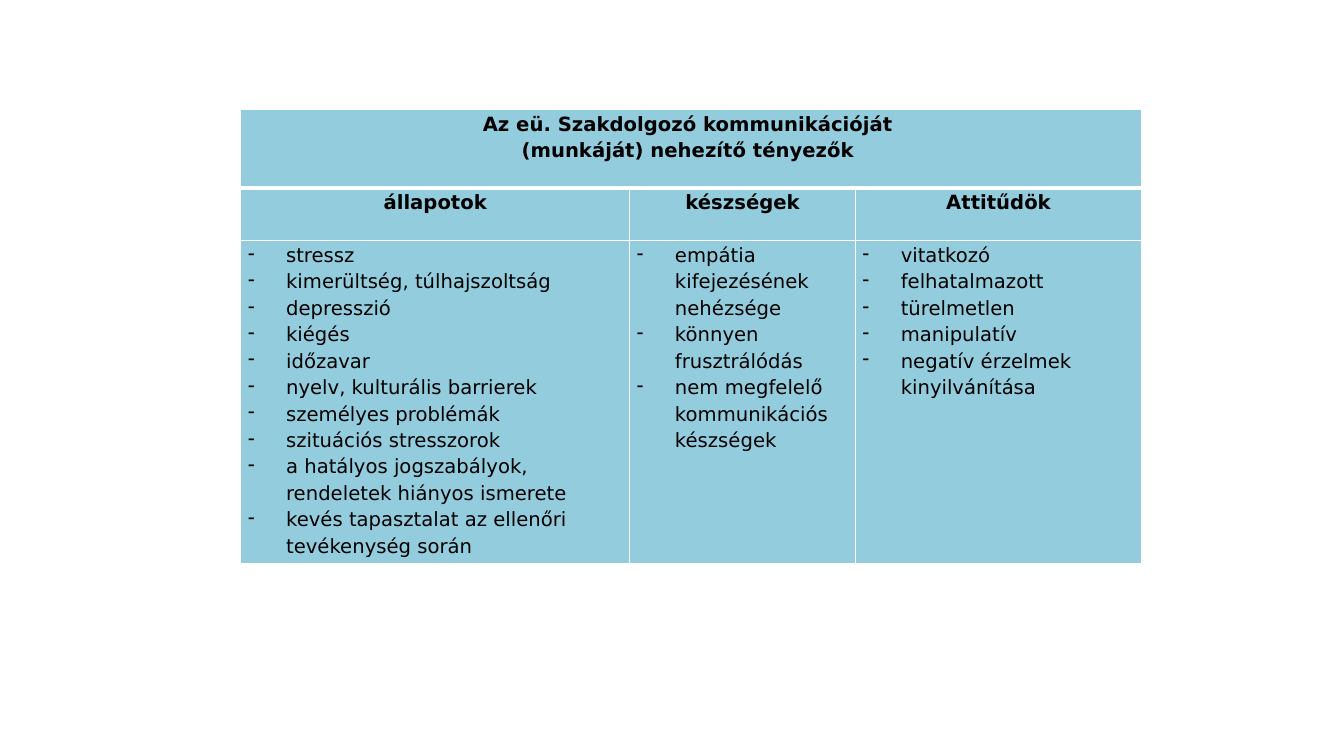
from dataclasses import dataclass

from pptx import Presentation
from pptx.dml.color import RGBColor
from pptx.enum.text import PP_ALIGN
from pptx.oxml import parse_xml
from pptx.oxml.ns import nsdecls
from pptx.util import Cm, Pt


@dataclass(frozen=True)
class Theme:
    fill: str = "93CDDD"
    line: str = "FFFFFF"
    ink: str = "000000"
    font: str = "DejaVu Sans"
    size: int = 14
    thin: int = 1
    thick: int = 3


THEME = Theme()

TITLE = ["Az eü. Szakdolgozó kommunikációját ", "(munkáját) nehezítő tényezők "]
HEADS = ["állapotok", "készségek", "Attitűdök"]
LISTS = [
    [
        "stressz",
        "kimerültség, túlhajszoltság",
        "depresszió",
        "kiégés",
        "időzavar",
        "nyelv, kulturális barrierek",
        "személyes problémák",
        "szituációs stresszorok",
        "a hatályos jogszabályok, rendeletek hiányos ismerete",
        "kevés tapasztalat az ellenőri tevékenység során",
    ],
    [
        "empátia kifejezésének nehézsége",
        "könnyen frusztrálódás",
        "nem megfelelő kommunikációs készségek",
    ],
    [
        "vitatkozó",
        "felhatalmazott",
        "türelmetlen",
        "manipulatív",
        "negatív érzelmek kinyilvánítása",
    ],
]

# Table layout in centimetres
LEFT, TOP = 6.07, 2.76
COLS = [9.8, 5.69, 7.21]
ROWS = [1.98, 1.32, 8.15]
PAD = 0.18
INDENT = 0.96


def add_dash(para):
    """Give a paragraph a hanging dash bullet."""
    props = para._p.get_or_add_pPr()
    props.set("marL", str(Cm(INDENT)))
    props.set("indent", str(-Cm(INDENT)))
    props.append(parse_xml(f'<a:buChar {nsdecls("a")} char="-"/>'))


def add_edges(cell, top, bottom):
    """Draw the four cell borders, which come before the fill."""
    props = cell._tc.get_or_add_tcPr()
    widths = {"L": THEME.thin, "R": THEME.thin, "T": top, "B": bottom}
    for spot, (side, width) in enumerate(widths.items()):
        props.insert(spot, parse_xml(
            f'<a:ln{side} {nsdecls("a")} w="{Pt(width)}"><a:solidFill>'
            f'<a:srgbClr val="{THEME.line}"/></a:solidFill></a:ln{side}>'))


def style_cell(cell, row):
    """Set the padding, fill and borders of a cell."""
    cell.margin_left = cell.margin_right = Cm(PAD)
    cell.margin_top = cell.margin_bottom = 0
    cell.fill.solid()
    cell.fill.fore_color.rgb = RGBColor.from_string(THEME.fill)
    add_edges(cell,
              THEME.thick if row == 1 else THEME.thin,
              THEME.thick if row == 0 else THEME.thin)


def write_cell(cell, lines, head):
    """Fill a cell with centred headings or a dashed list."""
    frame = cell.text_frame
    frame.text = "\n".join(lines)
    for para in frame.paragraphs:
        para.line_spacing = 1.15
        para.alignment = PP_ALIGN.CENTER if head else PP_ALIGN.LEFT
        if not head:
            add_dash(para)
        for run in para.runs:
            font = run.font
            font.name = THEME.font
            font.size = Pt(THEME.size)
            font.bold = head
            font.color.rgb = RGBColor.from_string(THEME.ink)


def add_grid(slide):
    """Build the empty table with its merged title row."""
    frame = slide.shapes.add_table(len(ROWS), len(COLS), Cm(LEFT), Cm(TOP),
                                   Cm(sum(COLS)), Cm(sum(ROWS)))
    table = frame.table
    table.first_row = table.horz_banding = False
    for col, width in zip(table.columns, COLS):
        col.width = Cm(width)
    for index, (row, height) in enumerate(zip(table.rows, ROWS)):
        row.height = Cm(height)
        for cell in row.cells:
            style_cell(cell, index)
    table.cell(0, 0).merge(table.cell(0, len(COLS) - 1))
    return table


def main():
    deck = Presentation()
    deck.slide_width, deck.slide_height = Cm(33.87), Cm(19.05)
    slide = deck.slides.add_slide(deck.slide_layouts[6])

    # Title row, then a heading and a list for each column
    table = add_grid(slide)
    write_cell(table.cell(0, 0), TITLE, True)
    for col, (head, items) in enumerate(zip(HEADS, LISTS)):
        write_cell(table.cell(1, col), [head], True)
        write_cell(table.cell(2, col), items, False)

    deck.save("out.pptx")


if __name__ == "__main__":
    main()
